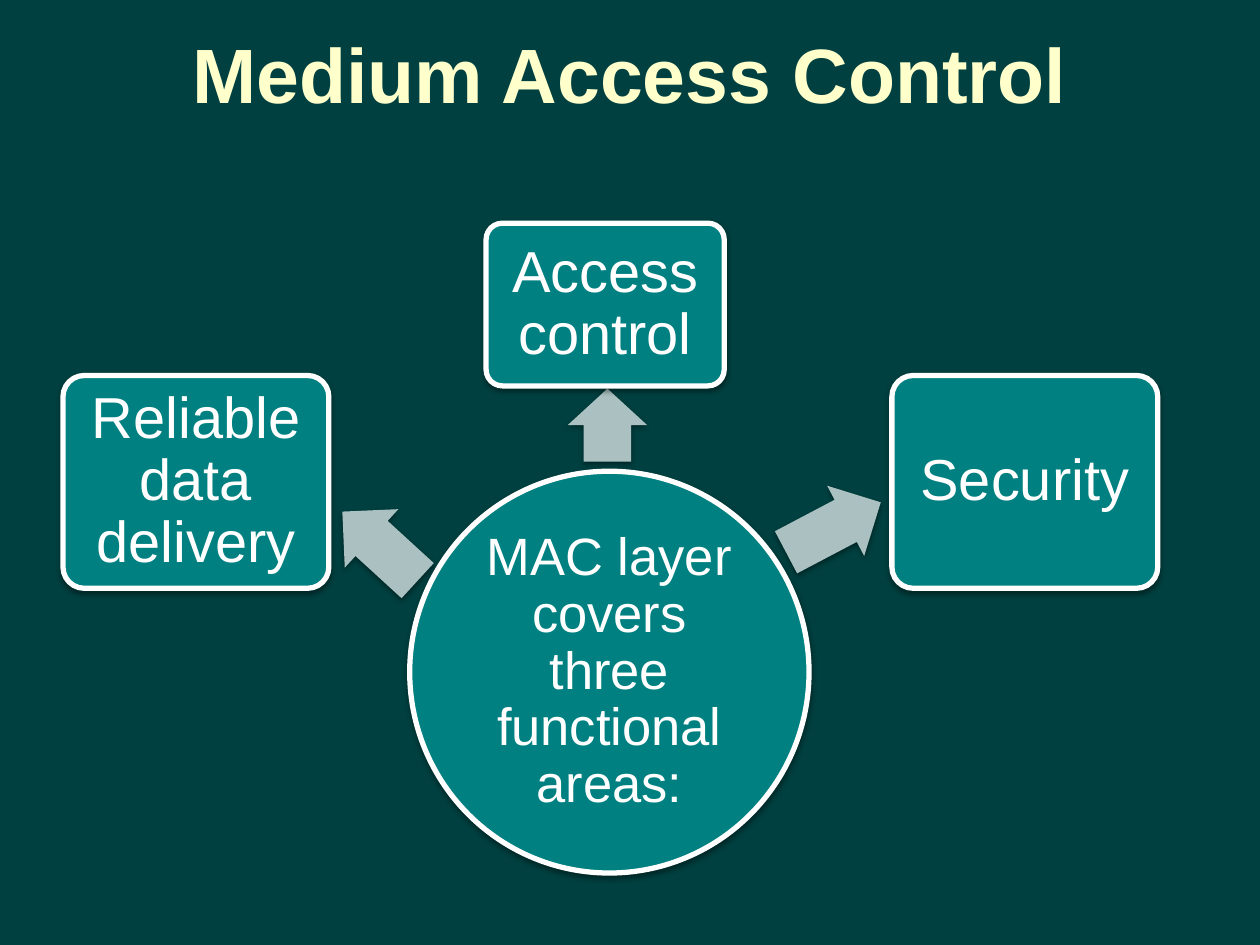
from lxml.etree import SubElement
from pptx import Presentation
from pptx.dml.color import RGBColor
from pptx.enum.shapes import MSO_SHAPE as Shape
from pptx.enum.text import MSO_ANCHOR as Anchor, PP_ALIGN as Align
from pptx.oxml.ns import qn
from pptx.util import Cm, Pt

BACKGROUND, TEAL, GREY, WHITE, CREAM = "004040", "008080", "ABC0C0", "FFFFFF", "FFFFCC"


def rgb(value):
    """Turn a hex string into a colour."""
    return RGBColor.from_string(value)


def write(sp, text, size, color, inset, bold=False):
    """Centre one run of text in a shape."""
    tf = sp.text_frame
    tf.word_wrap = True
    tf.vertical_anchor = Anchor.MIDDLE
    tf.margin_left = tf.margin_right = tf.margin_top = tf.margin_bottom = Cm(inset)
    p = tf.paragraphs[0]
    p.alignment = Align.CENTER
    p.line_spacing = 0.9
    r = p.add_run()
    r.text = text
    r.font.name, r.font.size, r.font.bold = "Arial", Pt(size), bold
    r.font.color.rgb = rgb(color)


def add_shadow(sp):
    """Give a shape a soft shadow straight below it."""
    sp.shadow.inherit = False
    effects = sp._element.spPr.find(qn("a:effectLst"))
    shadow = SubElement(effects, qn("a:outerShdw"), blurRad=str(Pt(3.1)),
                        dist=str(Pt(1.6)), dir="5400000", rotWithShape="0")
    color = SubElement(shadow, qn("a:srgbClr"), val="000000")
    SubElement(color, qn("a:alpha"), val="38000")


def add_solid(s, kind, box, fill):
    """Add a filled, shadowed shape without an outline."""
    sp = s.shapes.add_shape(kind, *map(Cm, box))
    sp.fill.solid()
    sp.fill.fore_color.rgb = rgb(fill)
    sp.line.fill.background()
    add_shadow(sp)
    return sp


def add_node(s, kind, box, text, size, inset):
    """Add a teal shape with a white outline and text."""
    sp = add_solid(s, kind, box, TEAL)
    sp.line.color.rgb = rgb(WHITE)
    sp.line.width = Pt(3)
    write(sp, text, size, WHITE, inset)
    return sp


def add_title(s, x, y, w, h):
    """Place the slide title in its box."""
    sp = s.shapes.title
    sp.left, sp.top, sp.width, sp.height = map(Cm, (x, y, w, h))
    write(sp, "Medium Access Control", 44, CREAM, 0.13, True)


def add_radial(s, x, y, w):
    """Draw the hub with an arrow to each of its three areas."""
    side_w, side_h, side_y = 5.36, 4.29, 3.07
    areas = [
        ("Reliable data delivery", (0, side_y, side_w, side_h), (5.36, 5.71, 2.06), 42.5),
        ("Access control", (8.53, 0, 4.8, 3.28), (10.24, 3.27, 1.47), 90),
        ("Security", (w - side_w, side_y, side_w, side_h), (14.45, 5.33, 2.16), 152.2),
    ]
    add_node(s, Shape.OVAL, (x + 6.99, y + 5, 8.05, 8.1),
             "MAC layer covers three functional areas:", 30, 0.05)
    for text, (left, top, width, height), (ax, ay, length), angle in areas:
        arrow = add_solid(s, Shape.LEFT_ARROW, (x + ax, y + ay, length, 1.6), GREY)
        arrow.adjustments[0], arrow.adjustments[1] = 0.6, 0.5
        arrow.rotation = angle
        node = add_node(s, Shape.ROUNDED_RECTANGLE,
                        (x + left, y + top, width, height), text, 33, 0.18)
        node.adjustments[0] = 0.1


def main():
    """Build and save the slide."""
    prs = Presentation()
    prs.slide_width, prs.slide_height = Cm(25.4), Cm(19.05)
    s = prs.slides.add_slide(prs.slide_layouts[5])
    s.background.fill.solid()
    s.background.fill.fore_color.rgb = rgb(BACKGROUND)
    add_title(s, 1.27, 0, 22.86, 3.18)
    add_radial(s, 1.27, 4.5, 22.07)
    prs.save("out.pptx")


if __name__ == "__main__":
    main()
